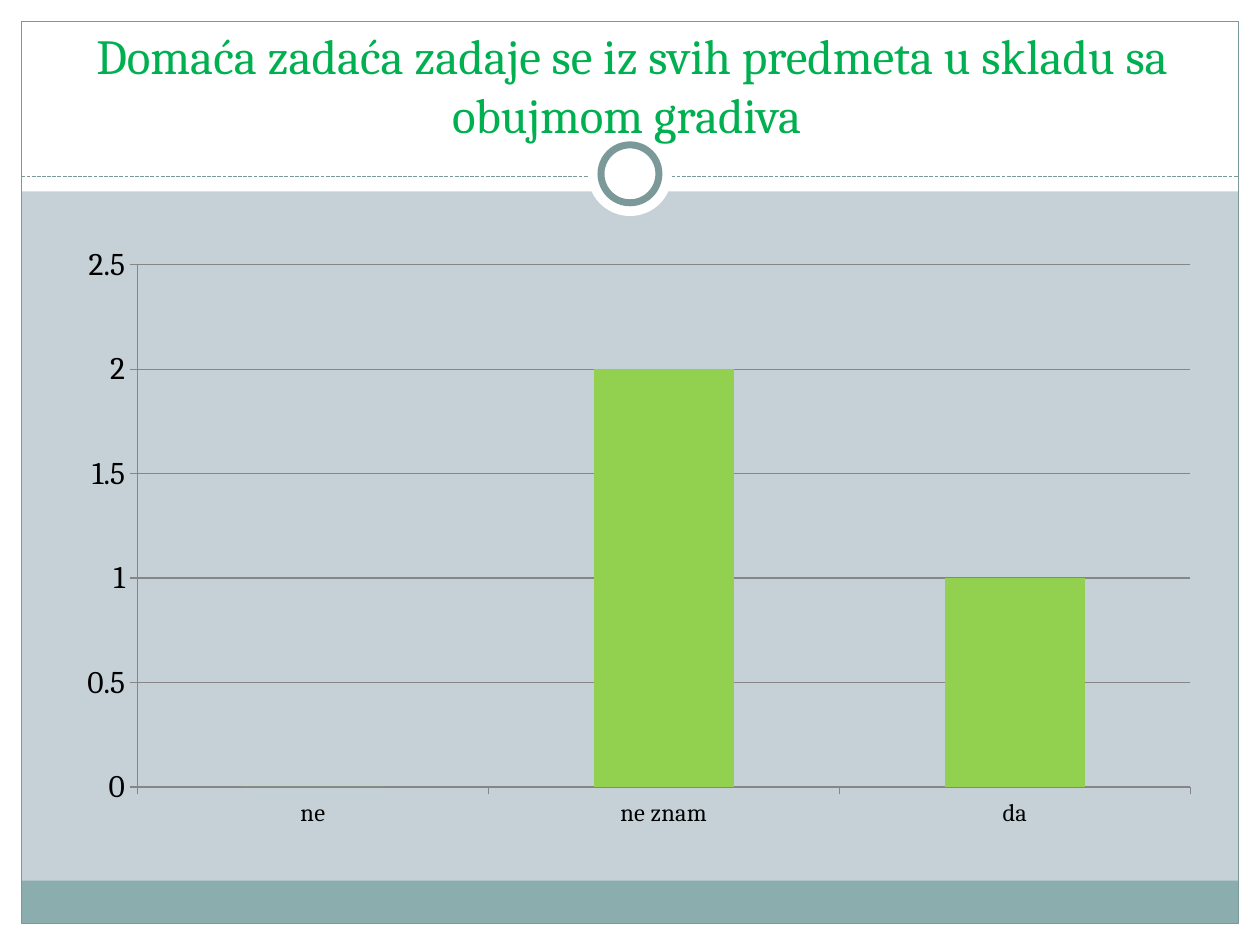
from dataclasses import dataclass

from pptx import Presentation
from pptx.chart.data import CategoryChartData
from pptx.dml.color import RGBColor
from pptx.enum.chart import XL_CHART_TYPE, XL_TICK_MARK
from pptx.enum.dml import MSO_LINE
from pptx.enum.shapes import MSO_CONNECTOR, MSO_SHAPE
from pptx.enum.text import MSO_ANCHOR, MSO_AUTO_SIZE, PP_ALIGN
from pptx.oxml.ns import qn
from pptx.util import Inches, Pt
from lxml.etree import SubElement


@dataclass(frozen=True)
class Theme:
    font: str = "Cambria"
    background: RGBColor = RGBColor(0xC5, 0xD1, 0xD7)
    white: RGBColor = RGBColor(0xFF, 0xFF, 0xFF)
    band: RGBColor = RGBColor(0x8C, 0xAD, 0xAE)
    frame: RGBColor = RGBColor(0x7C, 0x99, 0x9A)
    title: RGBColor = RGBColor(0x00, 0xB0, 0x50)
    bars: RGBColor = RGBColor(0x92, 0xD0, 0x50)
    axis: RGBColor = RGBColor(0x86, 0x86, 0x86)
    text: RGBColor = RGBColor(0x00, 0x00, 0x00)
    title_size: Pt = Pt(28)
    chart_size: Pt = Pt(10)
    category_size: Pt = Pt(14)
    value_size: Pt = Pt(18)
    thin: Pt = Pt(0.75)
    ring: Pt = Pt(4)


THEME = Theme()
WIDTH, HEIGHT, MARGIN = 10, 7.5, 0.17


def add_panel(slide, box, fill=None, line=None, weight=THEME.thin, kind=MSO_SHAPE.RECTANGLE):
    panel = slide.shapes.add_shape(kind, *map(Inches, box))
    panel.shadow.inherit = False
    if fill is None:
        panel.fill.background()
    else:
        panel.fill.solid()
        panel.fill.fore_color.rgb = fill
    if line is None:
        panel.line.fill.background()
    else:
        panel.line.color.rgb = line
        panel.line.width = weight


def add_circle(slide, center, diameter, **style):
    x, y = center
    box = (x - diameter / 2, y - diameter / 2, diameter, diameter)
    add_panel(slide, box, fill=THEME.white, kind=MSO_SHAPE.OVAL, **style)


def add_dashed_rule(slide, y):
    rule = slide.shapes.add_connector(
        MSO_CONNECTOR.STRAIGHT, Inches(MARGIN), Inches(y), Inches(WIDTH - MARGIN), Inches(y))
    rule.line.color.rgb = THEME.frame
    rule.line.width = THEME.thin
    rule.line.dash_style = MSO_LINE.SQUARE_DOT
    SubElement(rule._element.spPr, qn("a:effectLst"))


def add_frame(slide):
    inner_width = WIDTH - 2 * MARGIN
    # White margins and heading area
    for box in (
        (0, HEIGHT - MARGIN, WIDTH, MARGIN),
        (0, 0, WIDTH, 1.52),
        (0, 0, MARGIN, HEIGHT),
        (WIDTH - MARGIN, 0, MARGIN, HEIGHT),
    ):
        add_panel(slide, box, fill=THEME.white)
    # Footer band and outline
    add_panel(slide, (MARGIN, 6.99, inner_width, 0.34), fill=THEME.band)
    add_panel(slide, (MARGIN, MARGIN, inner_width, HEIGHT - 2 * MARGIN), line=THEME.frame)
    # Dashed rule with the ring at its middle
    add_dashed_rule(slide, 1.4)
    ring_center = (WIDTH / 2, 1.38)
    add_circle(slide, ring_center, 0.67)
    add_circle(slide, ring_center, 0.46, line=THEME.frame, weight=THEME.ring)


def set_title(slide, wording):
    title = slide.shapes.title
    title.left, title.top, title.width, title.height = map(Inches, (0.35, 0.36, 9.33, 0.83))
    frame = title.text_frame
    frame.word_wrap = True
    frame.auto_size = MSO_AUTO_SIZE.NONE
    frame.vertical_anchor = MSO_ANCHOR.BOTTOM
    paragraph = frame.paragraphs[0]
    paragraph.alignment = PP_ALIGN.CENTER
    run = paragraph.add_run()
    run.text = wording
    run.font.name = THEME.font
    run.font.size = THEME.title_size
    run.font.color.rgb = THEME.title
    # Bring the title in front of the heading area
    slide.shapes._spTree.append(title._element)


def style_axis(axis, size):
    axis.major_tick_mark = XL_TICK_MARK.OUTSIDE
    axis.minor_tick_mark = XL_TICK_MARK.NONE
    axis.format.line.color.rgb = THEME.axis
    axis.format.line.width = THEME.thin
    labels = axis.tick_labels.font
    labels.name = THEME.font
    labels.size = size
    labels.color.rgb = THEME.text


def add_answer_chart(slide, answers):
    data = CategoryChartData()
    data.categories = answers.keys()
    data.add_series("Series 1", answers.values())
    chart = slide.shapes.add_chart(
        XL_CHART_TYPE.COLUMN_CLUSTERED, *map(Inches, (0.51, 1.86, 9.12, 4.81)), data).chart
    chart.has_legend = False
    chart.has_title = False
    chart.font.name = THEME.font
    chart.font.size = THEME.chart_size
    chart.font.color.rgb = THEME.text

    plot = chart.plots[0]
    plot.gap_width = 150
    plot.vary_by_categories = False
    bars = plot.series[0].format.fill
    bars.solid()
    bars.fore_color.rgb = THEME.bars

    style_axis(chart.category_axis, THEME.category_size)
    counts = chart.value_axis
    style_axis(counts, THEME.value_size)
    counts.minimum_scale, counts.maximum_scale, counts.major_unit = 0, 2.5, 0.5
    counts.has_major_gridlines = True
    counts.major_gridlines.format.line.color.rgb = THEME.axis
    counts.major_gridlines.format.line.width = THEME.thin


def main():
    deck = Presentation()
    deck.slide_width, deck.slide_height = Inches(WIDTH), Inches(HEIGHT)
    slide = deck.slides.add_slide(deck.slide_layouts[5])
    slide.background.fill.solid()
    slide.background.fill.fore_color.rgb = THEME.background

    add_frame(slide)
    set_title(slide, "Domaća zadaća zadaje se iz svih predmeta u skladu sa obujmom gradiva ")
    add_answer_chart(slide, {"ne": 0, "ne znam": 2, "da": 1})
    deck.save("out.pptx")


if __name__ == "__main__":
    main()
